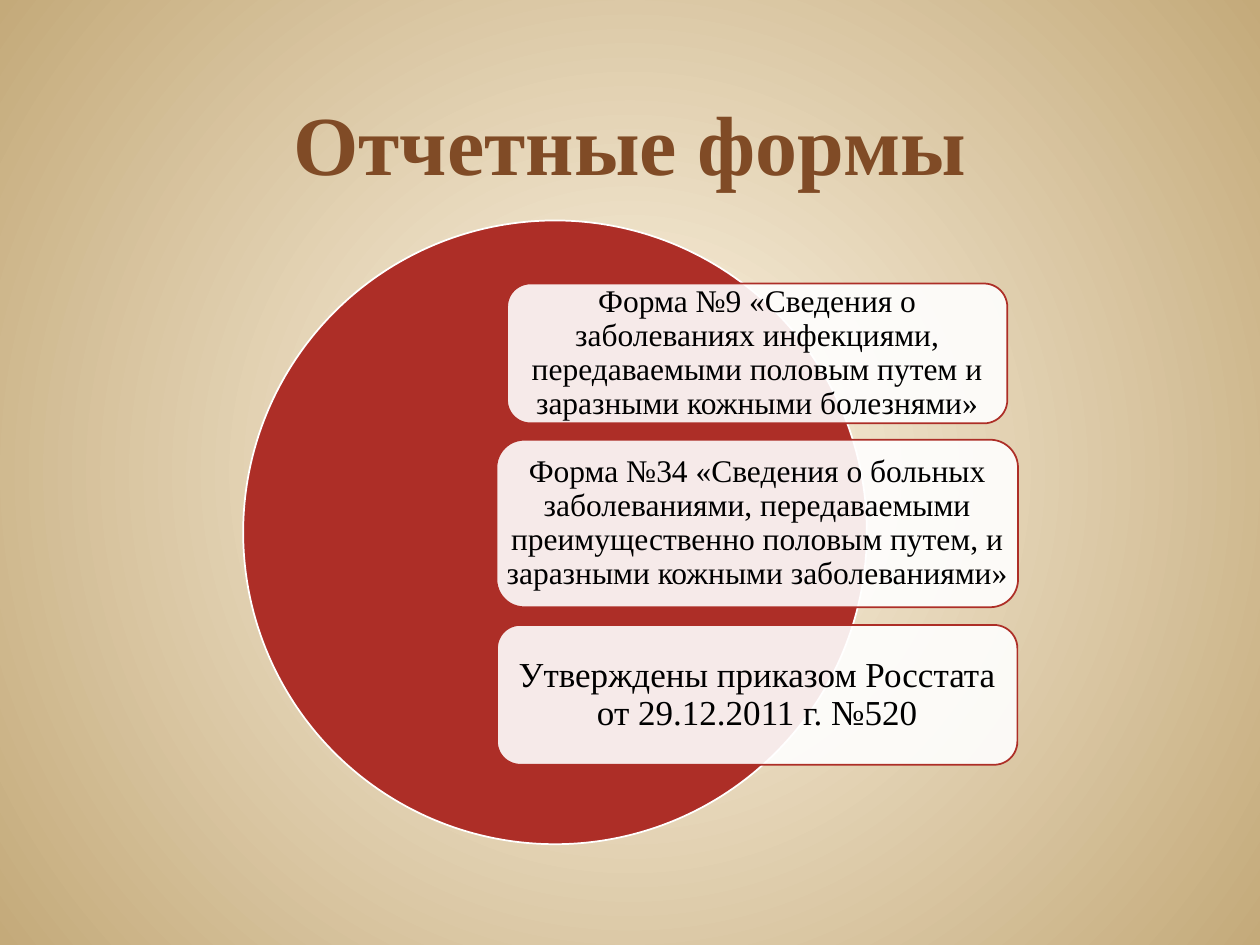
from lxml import etree
from pptx import Presentation
from pptx.dml.color import RGBColor
from pptx.enum.shapes import MSO_SHAPE as SHAPE
from pptx.enum.text import MSO_ANCHOR as ANCHOR, PP_ALIGN as ALIGN
from pptx.oxml import parse_xml
from pptx.oxml.ns import nsdecls, qn
from pptx.util import Inches, Pt

RED = "AD2E27"
WHITE = "FFFFFF"


def color(hex_value):
    return RGBColor.from_string(hex_value)


def add_outlined(kind, left, top, width, height, fill, line):
    shape = slide.shapes.add_shape(
        kind, Inches(left), Inches(top), Inches(width), Inches(height))
    shape.shadow.inherit = False
    shape.fill.solid()
    shape.fill.fore_color.rgb = color(fill)
    shape.line.color.rgb = color(line)
    shape.line.width = Pt(1)
    return shape


prs = Presentation()
prs.slide_width, prs.slide_height = Inches(10), Inches(7.5)
slide = prs.slides.add_slide(prs.slide_layouts[5])

# Background: circular gradient, light in the middle
backdrop = slide.background.fill
backdrop.gradient()
for stop, (position, hex_value) in zip(
        backdrop.gradient_stops, [(0, "FFF7E8"), (1, "C4AA7A")]):
    stop.position = position
    stop.color.rgb = color(hex_value)
linear = slide.background._cSld.find(".//" + qn("a:lin"))
linear.getparent().replace(linear, parse_xml(
    f'<a:path {nsdecls("a")} path="circle">'
    '<a:fillToRect l="50000" t="50000" r="50000" b="50000"/></a:path>'))

# Title
title = slide.shapes.title
title.left, title.top = Inches(0.5), Inches(0.33)
title.width, title.height = Inches(9), Inches(1.25)
title.text_frame.text = "Отчетные формы"
title.text_frame.vertical_anchor = ANCHOR.BOTTOM
heading = title.text_frame.paragraphs[0]
heading.alignment = ALIGN.CENTER
heading_font = heading.runs[0].font
heading_font.name, heading_font.size, heading_font.bold = "Times New Roman", Pt(48), True
heading_font.color.rgb = color("804B26")

# Circle behind the forms
add_outlined(SHAPE.OVAL, 1.93, 1.75, 4.95, 4.95, RED, WHITE)

# Report forms, centred on one vertical axis: top, width, height, size, text
AXIS = 6.01
forms = [
    (2.25, 3.97, 1.11, 18, "Форма №9 «Сведения о заболеваниях инфекциями, "
     "передаваемыми половым путем и заразными кожными болезнями»"),
    (3.49, 4.14, 1.33, 18, "Форма №34 «Сведения о больных заболеваниями, "
     "передаваемыми преимущественно половым путем, и заразными кожными заболеваниями»"),
    (4.96, 4.13, 1.11, 20, "Утверждены приказом Росстата от 29.12.2011 г. №520"),
]
for top, width, height, size, wording in forms:
    form = add_outlined(SHAPE.ROUNDED_RECTANGLE, AXIS - width / 2, top,
                        width, height, WHITE, RED)
    # 90 % opaque, so the circle shows through
    fill_color = form.fill._xPr.find(qn("a:solidFill"))[0]
    etree.SubElement(fill_color, qn("a:alpha"), val="90000")

    frame = form.text_frame
    frame.word_wrap = True
    frame.vertical_anchor = ANCHOR.MIDDLE
    frame.margin_left = frame.margin_right = 0
    frame.margin_top = frame.margin_bottom = 0
    frame.text = wording
    paragraph = frame.paragraphs[0]
    paragraph.alignment = ALIGN.CENTER
    paragraph.line_spacing = 0.9
    font = paragraph.runs[0].font
    font.name, font.size = "Times New Roman", Pt(size)
    font.color.rgb = color("000000")

prs.save("out.pptx")
